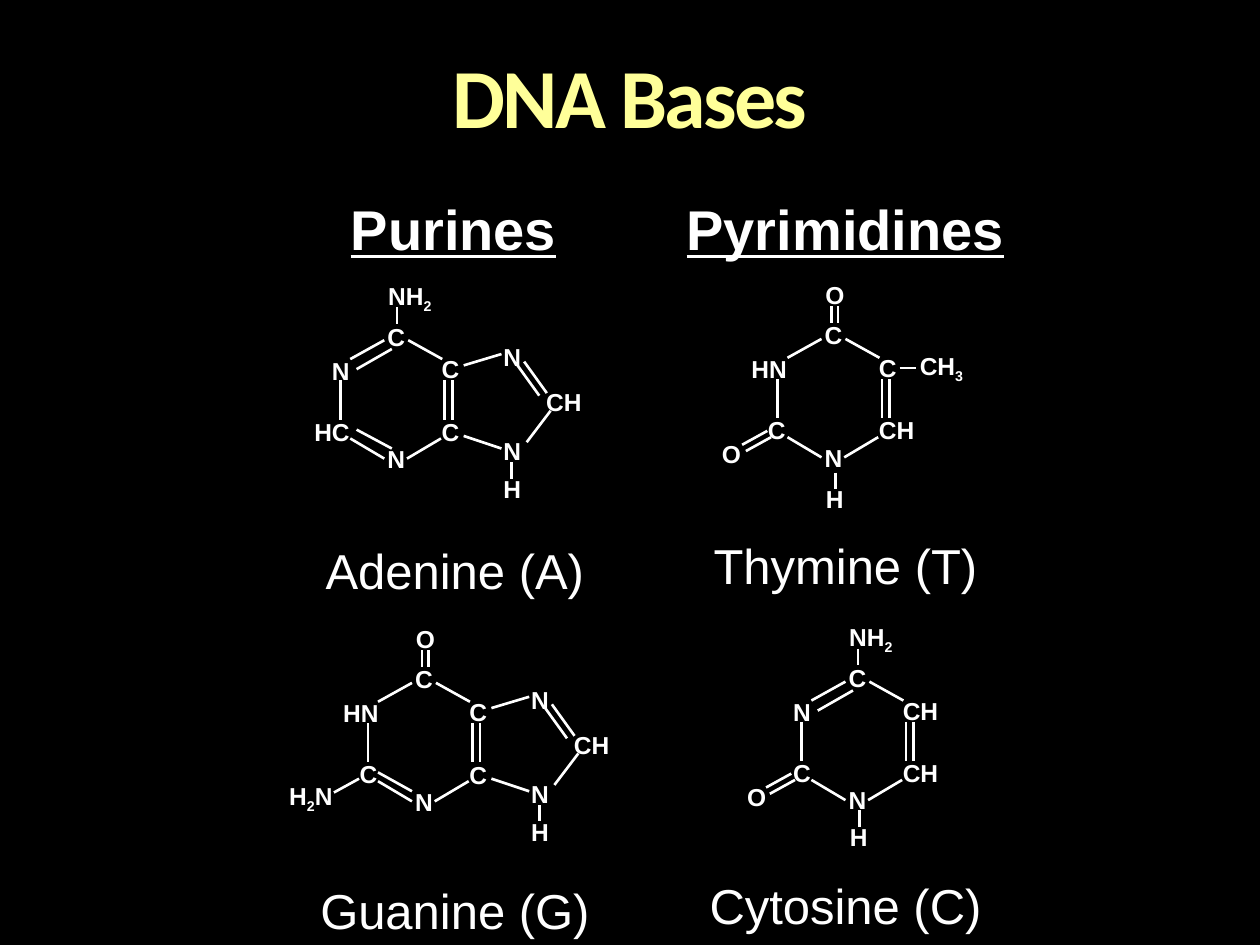
"""Builds the DNA bases slide with four molecule diagrams."""
from math import sqrt
from lxml.etree import SubElement
from pptx import Presentation
from pptx.dml.color import RGBColor
from pptx.enum.shapes import MSO_CONNECTOR as Link, MSO_SHAPE as Shape
from pptx.enum.text import MSO_ANCHOR as Anchor, MSO_AUTO_SIZE as Fit, PP_ALIGN as Align
from pptx.oxml.ns import qn
from pptx.util import Inches, Pt

BLACK = RGBColor(0x00, 0x00, 0x00)
WHITE = RGBColor(0xFF, 0xFF, 0xFF)
YELLOW = RGBColor(0xFF, 0xFF, 0x99)

WIDTHS = {"C": 0.15, "N": 0.15, "H": 0.15, "O": 0.16, "CH": 0.29, "HC": 0.29,
          "HN": 0.29, "NH2": 0.36, "H2N": 0.36, "CH3": 0.36}

HEX = [(0.08, 0.15, 0.35, 0), (0.54, 0, 0.81, 0.15), (0.08, 0.78, 0.35, 0.94),
       (0.53, 0.94, 0.8, 0.78), (0.89, 0.32, 0.89, 0.63),
       (0.83, 0.32, 0.83, 0.63), (0, 0.32, 0, 0.63)]
PENT = [(0.98, 0.2, 1.28, 0.11), (0.98, 0.76, 1.28, 0.86), (1.48, 0.81, 1.67, 0.56),
        (1.58, 0.44, 1.4, 0.19), (1.64, 0.42, 1.46, 0.17), (1.36, 0.97, 1.36, 1.1)]
AMINE = [(0.45, -0.26, 0.45, -0.13)]
KETO = [(0.43, -0.26, 0.43, -0.13), (0.48, -0.26, 0.48, -0.13)]
SIDE = [(-0.28, 0.84, -0.08, 0.73), (-0.25, 0.89, -0.05, 0.78)]
UPPER = [(0.13, 0.23, 0.41, 0.07)]

CORE = [("C", 0.45, -0.03), ("N", 0.45, 0.94)]
FUSED = CORE + [("C", 0.88, 0.23), ("C", 0.88, 0.73), ("N", 1.37, 0.13),
                ("N", 1.37, 0.88), ("CH", 1.78, 0.49), ("H", 1.37, 1.18)]

ADENINE = (2.7, 2.7, HEX + PENT + AMINE + UPPER + [(0.13, 0.71, 0.41, 0.86)],
           FUSED + [("NH2", 0.56, -0.34), ("N", 0.01, 0.24), ("HC", -0.06, 0.73)])
GUANINE = (2.92, 5.42, HEX + PENT + KETO + [(0.08, 0.71, 0.35, 0.86), (-0.27, 0.87, -0.07, 0.76)],
           FUSED + [("O", 0.46, -0.35), ("HN", -0.06, 0.24), ("C", 0.01, 0.72),
                    ("H2N", -0.46, 0.91)])
THYMINE = (6.17, 2.69, HEX + KETO + SIDE + [(0.46, 1.06, 0.46, 1.19), (0.97, 0.23, 1.1, 0.23)],
           CORE + [("O", 0.46, -0.35), ("HN", -0.07, 0.24), ("C", 0, 0.72), ("O", -0.36, 0.91),
                   ("C", 0.88, 0.23), ("CH", 0.95, 0.72), ("CH3", 1.31, 0.23), ("H", 0.46, 1.27)])
CYTOSINE = (6.36, 5.41, HEX + AMINE + UPPER + SIDE + [(0.46, 1.02, 0.46, 1.15)],
            CORE + [("NH2", 0.56, -0.34), ("N", 0.01, 0.24), ("C", 0.01, 0.72), ("O", -0.35, 0.91),
                    ("CH", 0.95, 0.23), ("CH", 0.95, 0.72), ("H", 0.46, 1.23)])

COLUMNS = [
    (True, [("Purines", 3.6, 1.81, 1.86, 0.63, 32), ("Adenine (A)", 3.61, 4.52, 2.28, 0.57, 28),
            ("Guanine (G)", 3.61, 7.22, 2.36, 0.57, 28)], [ADENINE, GUANINE]),
    (False, [("Pyrimidines", 6.71, 1.81, 2.74, 0.63, 32), ("Thymine (T)", 6.71, 4.48, 2.32, 0.57, 28),
             ("Cytosine (C)", 6.71, 7.18, 2.39, 0.57, 28)], [THYMINE, CYTOSINE]),
]


def add_label(group, oval, words, x, y, wide, high, size, bold, inset):
    """Centre a label on x, y; an oval's inner text area equals the given box."""
    grow = sqrt(2) if oval else 1
    wide, high = wide * grow, high * grow
    place = [Inches(n) for n in (x - wide / 2, y - high / 2, wide, high)]
    if oval:
        box = group.shapes.add_shape(Shape.OVAL, *place)
        box.shadow.inherit = False
        box.fill.background()
        box.line.fill.background()
    else:
        box = group.shapes.add_textbox(*place)
    frame = box.text_frame
    frame.word_wrap = False
    frame.auto_size = Fit.SHAPE_TO_FIT_TEXT
    frame.vertical_anchor = Anchor.MIDDLE
    if not inset:
        frame.margin_left = frame.margin_right = frame.margin_top = frame.margin_bottom = 0
    para = frame.paragraphs[0]
    for part in words:
        run = para.add_run()
        run.text = part
        run.font.name = "Arial"
        run.font.size = Pt(size)
        run.font.bold = bold
        run.font.color.rgb = WHITE
        if part.isdigit():
            run.font._element.set("baseline", "-25000")
    return para


def add_bond(group, x1, y1, x2, y2):
    """Draw one white bond line."""
    bond = group.shapes.add_connector(Link.STRAIGHT, *[Inches(n) for n in (x1, y1, x2, y2)])
    bond.line.color.rgb = WHITE
    bond.line.width = Pt(1.5)
    SubElement(bond._element.spPr, qn("a:effectLst"))


deck = Presentation()
deck.slide_width, deck.slide_height = Inches(10), Inches(7.5)
slide = deck.slides.add_slide(deck.slide_layouts[5])
slide.background.fill.solid()
slide.background.fill.fore_color.rgb = BLACK

title = slide.shapes.title
title.left, title.top, title.width, title.height = [Inches(n) for n in (0.5, 0.3, 9, 1.25)]
frame = title.text_frame
frame.text = "DNA Bases"
frame.auto_size = Fit.NONE
frame.vertical_anchor = Anchor.TOP
frame.margin_top = Inches(0.05)
frame.paragraphs[0].alignment = Align.CENTER
run = frame.paragraphs[0].runs[0]
run.font.name = "Calibri"
run.font.size = Pt(48)
run.font.bold = True
run.font.color.rgb = YELLOW
run.font._element.set("spc", "-150")

for oval, heads, bases in COLUMNS:
    group = slide.shapes.add_group_shape()
    for words, x, y, wide, high, size in heads:
        top = size == 32
        para = add_label(group, oval, [words], x, y, wide, high, size, top, True)
        para.alignment = Align.CENTER
        para.runs[0].font.underline = top
    for left, top, bonds, atoms in bases:
        for x1, y1, x2, y2 in bonds:
            add_bond(group, left + x1, top + y1, left + x2, top + y2)
        for mark, x, y in atoms:
            parts = mark.replace("2", " 2 ").replace("3", " 3 ").split()
            para = add_label(group, oval, parts, left + x, top + y, WIDTHS[mark], 0.24, 14, True, False)
            para.alignment = Align.RIGHT if mark in ("HN", "H2N") else Align.LEFT

deck.save("out.pptx")
